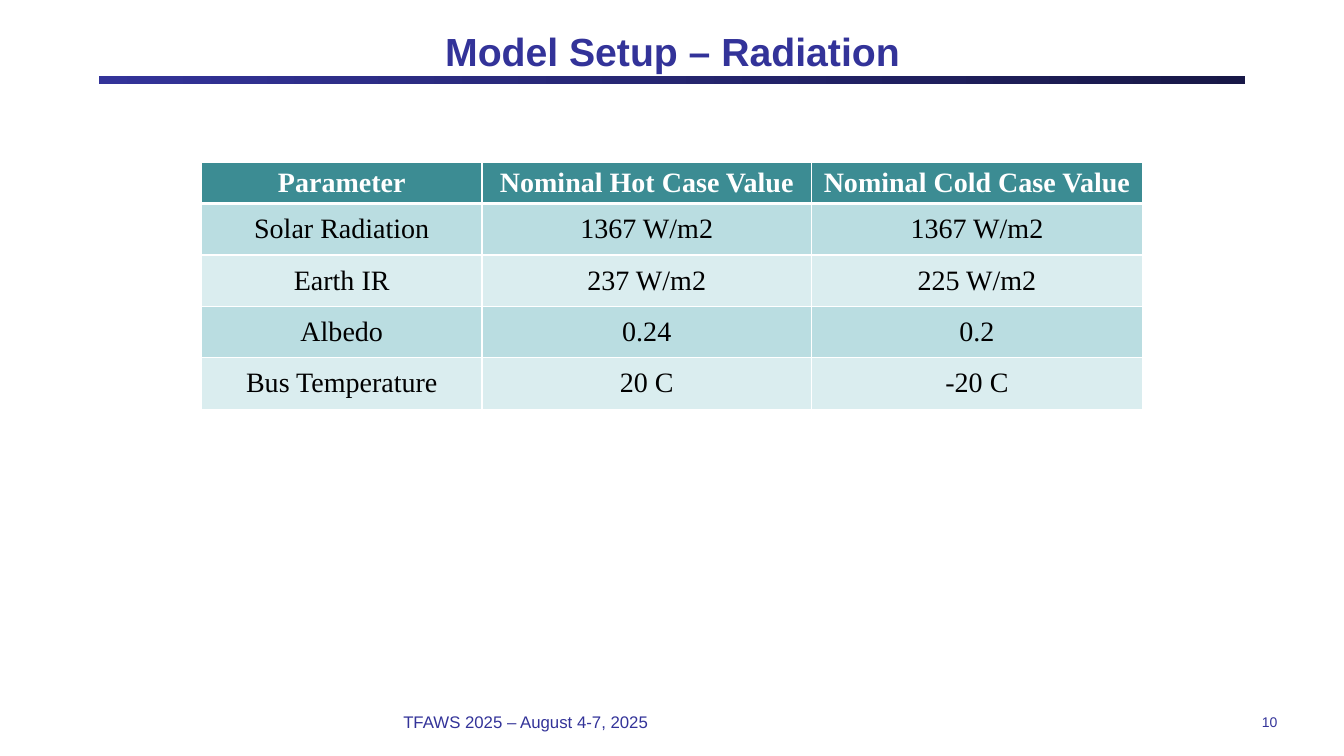
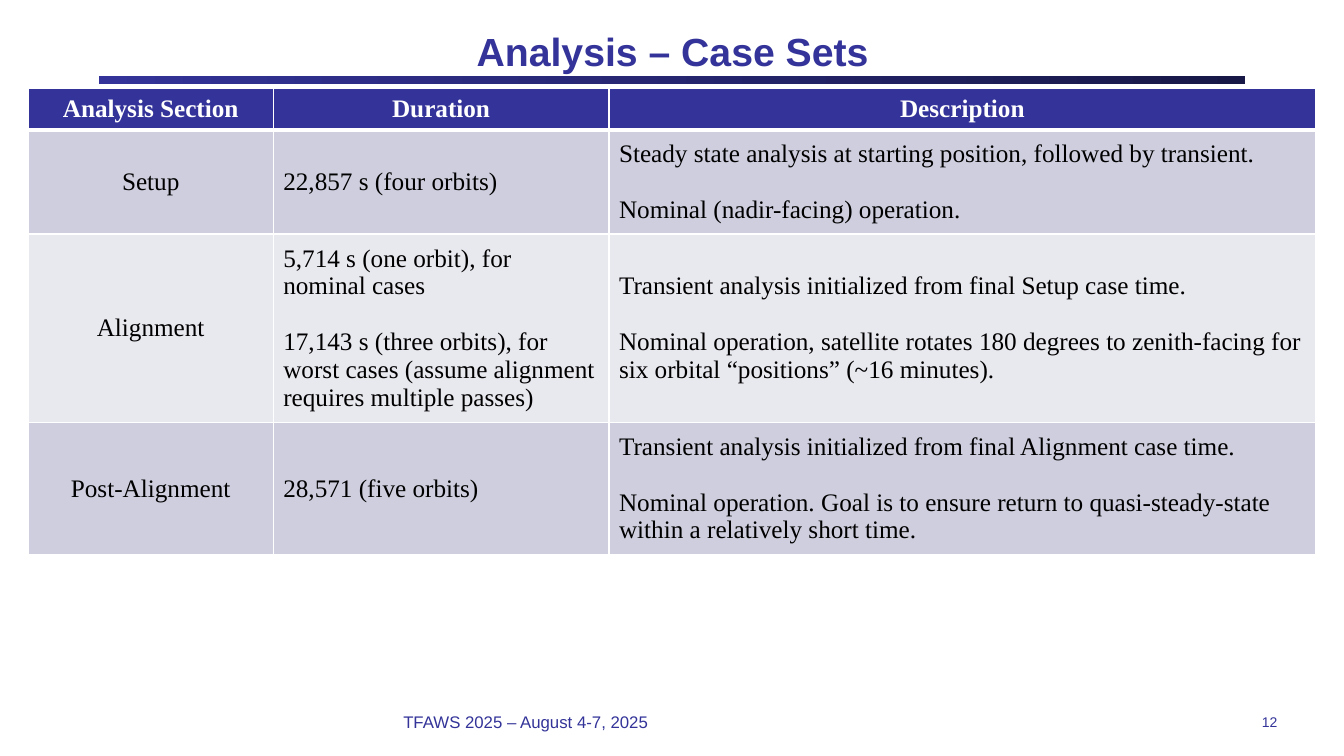
from dataclasses import dataclass

from lxml import etree
from pptx import Presentation
from pptx.dml.color import RGBColor
from pptx.enum import shapes, text
from pptx.oxml import ns
from pptx.util import Inches, Pt

HEX = {
    "navy": "333399",
    "dark": "181847",
    "teal": "3C8C93",
    "mint": "BADDE1",
    "ice": "DAEDEF",
    "lilac": "CECEDE",
    "mist": "E8E8EF",
    "white": "FFFFFF",
    "black": "000000",
}
SANS, SERIF = "Arial", "Times New Roman"
MID = text.MSO_ANCHOR.MIDDLE
LEFT, CENTER, RIGHT = text.PP_ALIGN.LEFT, text.PP_ALIGN.CENTER, text.PP_ALIGN.RIGHT


@dataclass
class Grid:
    """A table; a line break in a cell starts a new, spaced paragraph."""
    left: float
    top: float
    cols: list[float]
    rows: list[float]
    size: int
    head: str
    bands: tuple[str, str]
    aligns: list
    cells: list[list[str]]


@dataclass
class Page:
    title: str
    number: int
    grid: Grid


PAGES = [
    Page("Model Setup – Radiation", 10, Grid(
        2, 1.61, [2.78, 3.27, 3.28], [0.41] + [0.51] * 4, 20,
        "teal", ("mint", "ice"), [CENTER] * 3, [
            ["Parameter", "Nominal Hot Case Value", "Nominal Cold Case Value"],
            ["Solar Radiation", "1367 W/m2", "1367 W/m2"],
            ["Earth IR", "237 W/m2", "225 W/m2"],
            ["Albedo", "0.24", "0.2"],
            ["Bus Temperature", "20 C", "-20 C"],
        ])),
    Page("Analysis – Case Sets", 12, Grid(
        0.28, 0.88, [2.43, 3.33, 7.01], [0.41, 1.03, 1.87, 1.31], 18,
        "navy", ("lilac", "mist"), [CENTER, LEFT, LEFT], [
            ["Analysis Section", "Duration", "Description"],
            ["Setup", "22,857 s (four orbits)",
             "Steady state analysis at starting position, followed by transient.\n"
             "Nominal (nadir-facing) operation."],
            ["Alignment",
             "5,714 s (one orbit), for nominal cases\n"
             "17,143 s (three orbits), for worst cases "
             "(assume alignment requires multiple passes)",
             "Transient analysis initialized from final Setup case time.\n"
             "Nominal operation, satellite rotates 180 degrees to zenith-facing "
             "for six orbital “positions” (~16 minutes)."],
            ["Post-Alignment", "28,571 (five orbits)",
             "Transient analysis initialized from final Alignment case time.\n"
             "Nominal operation. Goal is to ensure return to quasi-steady-state "
             "within a relatively short time."],
        ])),
]


def color(name: str) -> RGBColor:
    return RGBColor.from_string(HEX[name])


def style(par, face: str, size: int, tint: str, bold: bool, align) -> None:
    font = par.font
    font.name, font.size, font.bold = face, Pt(size), bold
    font.color.rgb = color(tint)
    par.alignment = align


def place(shape, left: float, top: float, width: float, height: float) -> None:
    shape.left, shape.top = Inches(left), Inches(top)
    shape.width, shape.height = Inches(width), Inches(height)


def label(shape, words: str, size: int, align, side: float = 0, bold: bool = False) -> None:
    frame = shape.text_frame
    frame.text = words
    frame.word_wrap = True
    frame.auto_size = text.MSO_AUTO_SIZE.NONE
    frame.vertical_anchor = MID
    frame.margin_left = frame.margin_right = Inches(side)
    frame.margin_top = frame.margin_bottom = 0
    style(frame.paragraphs[0], SANS, size, "navy", bold, align)


def frame_page(slide, page: Page) -> None:
    """Add the title, the band below it and the footer."""
    title = slide.shapes.title
    place(title, 0.67, 0.21, 12, 0.58)
    label(title, page.title, 28, CENTER, 0.1, True)

    band = slide.shapes.add_shape(
        shapes.MSO_SHAPE.RECTANGLE,
        Inches(0.98), Inches(0.75), Inches(11.37), Inches(0.08))
    band.shadow.inherit = False
    band.line.fill.background()
    band.fill.gradient()
    band.fill.gradient_angle = 0
    for stop, tint in zip(band.fill.gradient_stops, ("navy", "dark")):
        stop.color.rgb = color(tint)

    for left, width, words, size, align in (
            (4, 5.33, "TFAWS 2025 – August 4-7, 2025", 12, LEFT),
            (9.89, 2.78, str(page.number), 10, RIGHT)):
        box = slide.shapes.add_textbox(
            Inches(left), Inches(7), Inches(width), Inches(0.33))
        label(box, words, size, align)


def border(cell, row: int) -> None:
    """Draw white cell edges, thicker below the header row."""
    props = cell._tc.get_or_add_tcPr()
    widths = {"L": 1, "R": 1, "T": 3 if row == 1 else 1, "B": 3 if row == 0 else 1}
    for spot, (side, width) in enumerate(widths.items()):
        line = etree.Element(ns.qn(f"a:ln{side}"), w=str(Pt(width)))
        fill = etree.SubElement(line, ns.qn("a:solidFill"))
        etree.SubElement(fill, ns.qn("a:srgbClr"), val=HEX["white"])
        props.insert(spot, line)


def fill_cell(cell, grid: Grid, row: int, col: int) -> None:
    head = row == 0
    cell.text = grid.cells[row][col]
    cell.vertical_anchor = MID
    if not head:
        cell.margin_top = cell.margin_bottom = Inches(0.1)
    cell.fill.solid()
    cell.fill.fore_color.rgb = color(grid.head if head else grid.bands[(row - 1) % 2])
    border(cell, row)
    for spot, par in enumerate(cell.text_frame.paragraphs):
        style(par, SERIF, grid.size, "white" if head else "black", head,
              CENTER if head else grid.aligns[col])
        if spot:
            par.space_before = Pt(20)


def add_grid(slide, grid: Grid) -> None:
    table = slide.shapes.add_table(
        len(grid.rows), len(grid.cols), Inches(grid.left), Inches(grid.top),
        Inches(sum(grid.cols)), Inches(sum(grid.rows))).table
    table.horz_banding = False
    for col, width in zip(table.columns, grid.cols):
        col.width = Inches(width)
    for row, height in enumerate(grid.rows):
        table.rows[row].height = Inches(height)
        for col in range(len(grid.cols)):
            fill_cell(table.cell(row, col), grid, row, col)


def main() -> None:
    deck = Presentation()
    deck.slide_width, deck.slide_height = Inches(13.33), Inches(7.5)
    for page in PAGES:
        slide = deck.slides.add_slide(deck.slide_layouts[5])
        frame_page(slide, page)
        add_grid(slide, page.grid)
    deck.save("out.pptx")


if __name__ == "__main__":
    main()
